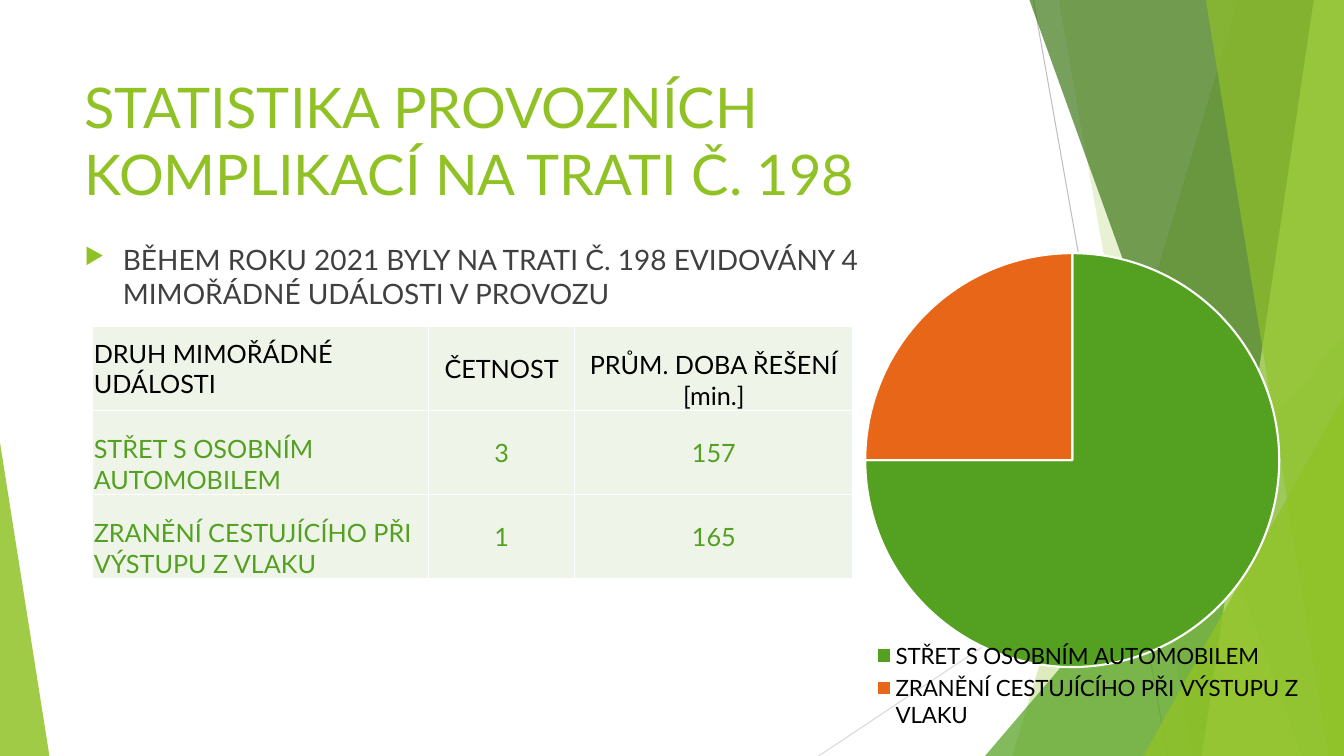
from dataclasses import dataclass

from lxml.etree import SubElement
from pptx import Presentation
from pptx.chart.data import CategoryChartData
from pptx.dml.color import RGBColor
from pptx.enum.chart import XL_CHART_TYPE as ChartType, XL_LEGEND_POSITION as LegendPosition
from pptx.enum.shapes import MSO_CONNECTOR as Connector, MSO_SHAPE as Shape
from pptx.enum.text import MSO_ANCHOR as Anchor, PP_ALIGN as Align
from pptx.oxml import parse_xml
from pptx.oxml.ns import nsdecls, qn
from pptx.util import Inches, Pt

FONT = "Lato"
WHITE = RGBColor(0xFF, 0xFF, 0xFF)
BLACK = RGBColor(0, 0, 0)
CHARCOAL = RGBColor(0x40, 0x40, 0x40)
GRAY = RGBColor(0xBF, 0xBF, 0xBF)
LIGHT_GRAY = RGBColor(0xD9, 0xD9, 0xD9)
LIME = RGBColor(0x90, 0xC2, 0x26)
PALE_LIME = RGBColor(0xC0, 0xE4, 0x74)
GREEN = RGBColor(0x54, 0xA0, 0x21)
DARK_GREEN = RGBColor(0x3F, 0x78, 0x19)
ORANGE = RGBColor(0xE7, 0x66, 0x18)
CELL_GREEN = RGBColor(0xEE, 0xF4, 0xE8)

COLUMNS, ROWS = 13.33, 7.5
COLLISION = "STŘET S OSOBNÍM AUTOMOBILEM"
INJURY = "ZRANĚNÍ CESTUJÍCÍHO PŘI VÝSTUPU Z VLAKU"


@dataclass
class Box:
    left: float
    top: float
    width: float
    height: float

    @property
    def right(self):
        return self.left + self.width

    @property
    def bottom(self):
        return self.top + self.height

    def lengths(self):
        return [Inches(n) for n in (self.left, self.top, self.width, self.height)]


def write(frame, text, size=18, color=BLACK, align=Align.LEFT, bullet=None):
    frame.word_wrap = True
    paragraph = frame.paragraphs[0]
    paragraph.alignment = align
    if bullet:
        properties = paragraph._p.get_or_add_pPr()
        properties.set("marL", str(Inches(0.38)))
        properties.set("indent", str(-Inches(0.38)))
        bullet_color = SubElement(properties, qn("a:buClr"))
        SubElement(bullet_color, qn("a:srgbClr"), val=str(LIME))
        SubElement(properties, qn("a:buSzPct"), val="80000")
        SubElement(properties, qn("a:buChar"), char=bullet)
    run = paragraph.add_run()
    run.text = text
    run.font.name = FONT
    run.font.size = Pt(size)
    run.font.color.rgb = color


def add_text(slide, box, text, **text_format):
    write(slide.shapes.add_textbox(*box.lengths()).text_frame, text, **text_format)


def paint(shape, color, opacity):
    shape.shadow.inherit = False
    shape.line.fill.background()
    shape.fill.solid()
    shape.fill.fore_color.rgb = color
    rgb = shape._element.spPr.find(".//" + qn("a:srgbClr"))
    SubElement(rgb, qn("a:alpha"), val=str(opacity * 1000))


def add_thin_line(slide, start, end, color):
    line = slide.shapes.add_connector(
        Connector.STRAIGHT, *[Inches(n) for n in (*start, *end)])
    line.line.color.rgb = color
    line.line.width = Pt(0.75)
    SubElement(line._element.spPr, qn("a:effectLst"))


def add_band(slide, box, top_inset, bottom_inset, color, opacity):
    corners = [(box.right - top_inset, box.top), (box.right, box.top),
               (box.right, box.bottom), (box.right - bottom_inset, box.bottom)]
    points = [(Inches(x), Inches(y)) for x, y in corners]
    builder = slide.shapes.build_freeform(*points[0])
    builder.add_line_segments(points[1:])
    paint(builder.convert_to_shape(), color, opacity)


def add_corner(slide, box, width, height, apex, color, opacity):
    left = box.left + apex * (box.width - width)
    corner = Box(left, box.bottom - height, width, height)
    shape = slide.shapes.add_shape(Shape.ISOSCELES_TRIANGLE, *corner.lengths())
    shape.adjustments[0] = apex
    paint(shape, color, opacity)


def add_facets(slide, box):
    add_thin_line(slide, (box.right - 3.08, box.top), (box.right - 1.75, box.bottom), GRAY)
    add_thin_line(slide, (box.right, box.bottom - 3.47), (box.right - 5.21, box.bottom), LIGHT_GRAY)
    add_band(slide, box, 1.05, 3.29, LIME, 30)
    add_band(slide, box, 2.83, 1.5, LIME, 20)
    add_corner(slide, box, 3.56, 4.17, 1, GREEN, 72)
    add_band(slide, box, 3.12, 0.42, DARK_GREEN, 70)
    add_band(slide, box, 0.3, 1.41, PALE_LIME, 70)
    add_band(slide, box, 1.37, 0.15, LIME, 65)
    add_corner(slide, box, 1.99, 3.57, 1, LIME, 80)
    add_corner(slide, box, 0.49, 3.11, 0, LIME, 85)


def add_cell_borders(cell):
    properties = cell._tc.get_or_add_tcPr()
    for side in ("lnL", "lnR", "lnT", "lnB"):
        border = SubElement(properties, qn("a:" + side), w=str(Pt(1)))
        SubElement(SubElement(border, qn("a:solidFill")), qn("a:srgbClr"), val=str(WHITE))


def add_incident_table(slide, box):
    records = [("DRUH MIMOŘÁDNÉ UDÁLOSTI", "ČETNOST", "PRŮM. DOBA ŘEŠENÍ [min.]"),
               (COLLISION, "3", "157"), (INJURY, "1", "165")]
    bottom_cells = {(0, 2), (1, 0), (2, 0)}
    table = slide.shapes.add_table(len(records), 3, *box.lengths()).table
    for column, width in zip(table.columns, (3.33, 1.45, 2.76)):
        column.width = Inches(width)
    for i, record in enumerate(records):
        table.rows[i].height = Inches(box.height / len(records))
        for j, text in enumerate(record):
            cell = table.cell(i, j)
            cell.margin_left = cell.margin_right = cell.margin_top = Inches(0.01)
            cell.margin_bottom = 0
            cell.vertical_anchor = Anchor.BOTTOM if (i, j) in bottom_cells else Anchor.MIDDLE
            add_cell_borders(cell)
            cell.fill.solid()
            cell.fill.fore_color.rgb = CELL_GREEN
            write(cell.text_frame, text, color=GREEN if i else BLACK,
                  align=Align.CENTER if j else Align.LEFT)


def chart_layout(x, y, width, height, inner=False):
    layout = parse_xml(f"<c:layout {nsdecls('c')}><c:manualLayout/></c:layout>")
    manual = layout[0]
    if inner:
        SubElement(manual, qn("c:layoutTarget"), val="inner")
    for name, value in (("xMode", "edge"), ("yMode", "edge"),
                        ("x", x), ("y", y), ("w", width), ("h", height)):
        SubElement(manual, qn("c:" + name), val=str(value))
    return layout


def add_incident_pie(slide, box):
    data = CategoryChartData()
    data.categories = [COLLISION, INJURY]
    data.add_series("Series 1", (75, 25))
    chart = slide.shapes.add_chart(ChartType.PIE, *box.lengths(), data).chart
    chart.has_title = False
    chart.font.name, chart.font.size = FONT, Pt(10)
    chart.font.color.rgb = BLACK
    chart.plots[0].vary_by_categories = True
    for i, color in enumerate((GREEN, ORANGE)):
        slice_format = chart.plots[0].series[0].points[i].format
        slice_format.fill.solid()
        slice_format.fill.fore_color.rgb = color
        slice_format.line.color.rgb = WHITE
        slice_format.line.width = Pt(1.5)
    chart.has_legend = True
    legend = chart.legend
    legend.position = LegendPosition.BOTTOM
    legend.include_in_layout = False
    legend.font.name, legend.font.size = FONT, Pt(16)
    legend.font.color.rgb = BLACK

    root = chart.element.find(qn("c:chart"))
    root.addnext(parse_xml(
        f"<c:spPr {nsdecls('c', 'a')}><a:noFill/><a:ln><a:noFill/></a:ln></c:spPr>"))
    plot_area = root.find(qn("c:plotArea"))
    legend_element = root.find(qn("c:legend"))
    for parent in (plot_area, legend_element):
        for layout in parent.findall(qn("c:layout")):
            parent.remove(layout)
    plot_area.insert(0, chart_layout(0.1, 0.03, 0.8, 0.81, inner=True))
    legend_element.find(qn("c:legendPos")).addnext(chart_layout(0.1, 0.78, 0.86, 0.19))


def build_statistics_slide(presentation):
    slide = presentation.slides.add_slide(presentation.slide_layouts[6])
    add_facets(slide, Box(0, 0, COLUMNS, ROWS))
    add_text(slide, Box(0.74, 0.67, 9.4, 1.44),
             "STATISTIKA PROVOZNÍCH KOMPLIKACÍ NA TRATI Č. 198", size=40, color=LIME)
    add_text(slide, Box(0.74, 2.36, 8.95, 4.24),
             "BĚHEM ROKU 2021 BYLY NA TRATI Č. 198 EVIDOVÁNY 4 MIMOŘÁDNÉ UDÁLOSTI V PROVOZU",
             size=20, color=CHARCOAL, bullet="▶")
    add_incident_table(slide, Box(0.92, 3.24, 7.54, 2.5))
    add_incident_pie(slide, Box(8.05, 2.36, 5.17, 5.07))


def main():
    presentation = Presentation()
    presentation.slide_width = Inches(COLUMNS)
    presentation.slide_height = Inches(ROWS)
    build_statistics_slide(presentation)
    presentation.save("out.pptx")


if __name__ == "__main__":
    main()
